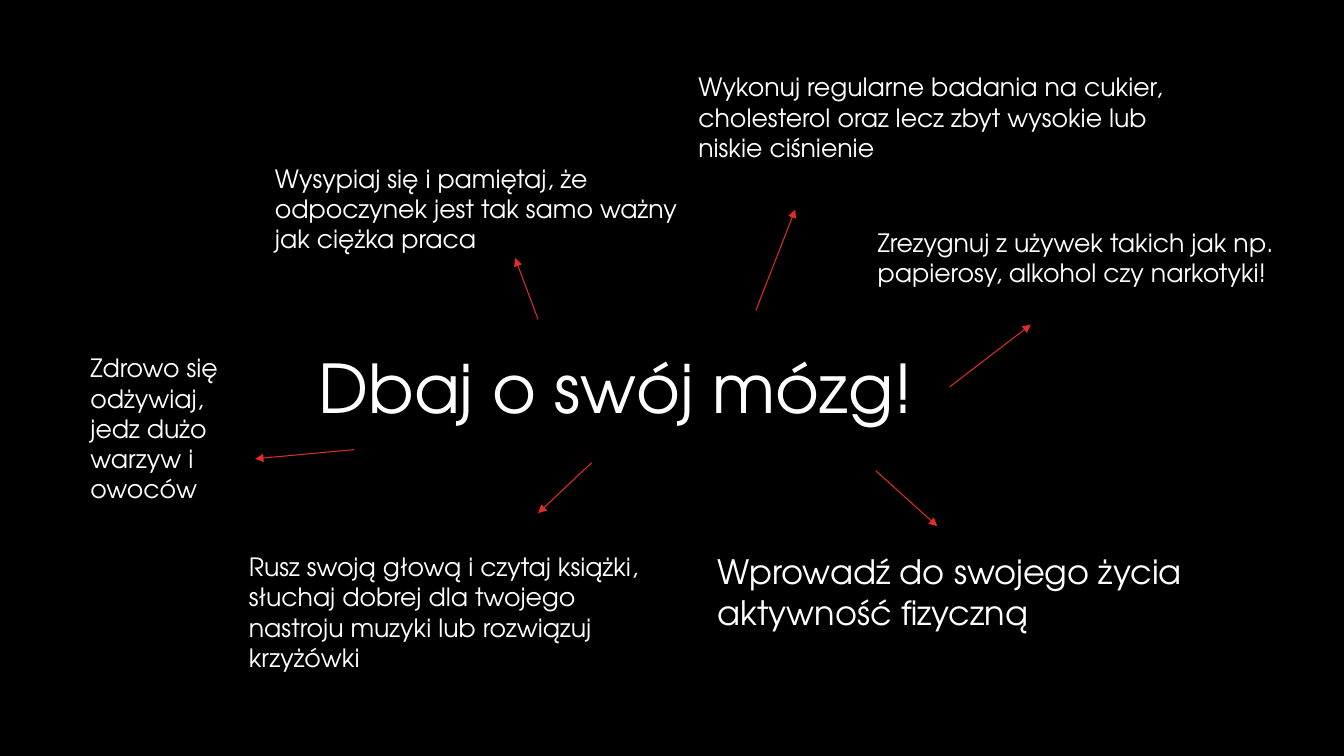
"""Build a mind map slide of advice on caring for the brain."""
from lxml.etree import SubElement
from pptx import Presentation
from pptx.dml.color import RGBColor
from pptx.enum.shapes import MSO_CONNECTOR
from pptx.enum.text import MSO_AUTO_SIZE
from pptx.oxml.ns import qn
from pptx.util import Cm, Pt

theme = {
    "back": RGBColor.from_string("000000"),
    "text": RGBColor.from_string("FFFFFF"),
    "arrow": RGBColor.from_string("DF2E28"),
    "face": "TeX Gyre Adventor",
    "title": Pt(48),
    "large": Pt(24),
    "body": Pt(18),
    "line": Pt(0.75),
}
notes = [
    ("Dbaj o swój mózg!", "title", (7.77, 8.59, 20.09, 2.29)),
    ("Zdrowo się odżywiaj, jedz dużo warzyw i owoców", "body",
     (2.03, 8.76, 4.39, 4.06)),
    ("Wprowadź do swojego życia aktywność fizyczną", "large",
     (17.83, 13.77, 14.02, 2.29)),
    ("Wykonuj regularne badania na cukier, cholesterol oraz lecz zbyt "
     "wysokie lub niskie ciśnienie", "body", (17.35, 1.68, 12.57, 2.54)),
    ("Wysypiaj się i pamiętaj, że odpoczynek jest tak samo ważny "
     "jak ciężka praca", "body", (6.68, 3.99, 10.92, 2.54)),
    ("Zrezygnuj z używek takich jak np. papierosy, alkohol czy narkotyki!",
     "body", (21.87, 5.61, 10.64, 1.78)),
    ("Rusz swoją głową i czytaj książki, słuchaj dobrej dla twojego "
     "nastroju muzyki lub rozwiązuj krzyżówki", "body",
     (6.02, 13.77, 10.92, 3.3)),
]
arrows = [
    (22.07, 11.86, 23.62, 13.26),
    (19.05, 7.82, 20.04, 5.28),
    (14.91, 11.66, 13.56, 12.93),
    (23.93, 9.75, 25.98, 8.18),
    (13.56, 8.05, 12.98, 6.5),
    (8.92, 11.33, 6.43, 11.56),
]

deck = Presentation()
deck.slide_width, deck.slide_height = Cm(33.87), Cm(19.05)
slide = deck.slides.add_slide(deck.slide_layouts[6])
slide.background.fill.solid()
slide.background.fill.fore_color.rgb = theme["back"]

for words, size, place in notes:
    frame = slide.shapes.add_textbox(*map(Cm, place)).text_frame
    frame.word_wrap = True
    frame.auto_size = MSO_AUTO_SIZE.SHAPE_TO_FIT_TEXT
    run = frame.paragraphs[0].add_run()
    run.text = words
    for key, value in {"name": theme["face"], "size": theme[size]}.items():
        setattr(run.font, key, value)
    run.font.color.rgb = theme["text"]

for ends in arrows:
    arrow = slide.shapes.add_connector(MSO_CONNECTOR.STRAIGHT, *map(Cm, ends))
    arrow.line.color.rgb = theme["arrow"]
    arrow.line.width = theme["line"]
    props = arrow.element.spPr
    SubElement(props.find(qn("a:ln")), qn("a:tailEnd"), type="triangle")
    SubElement(props, qn("a:effectLst"))

deck.save("out.pptx")
